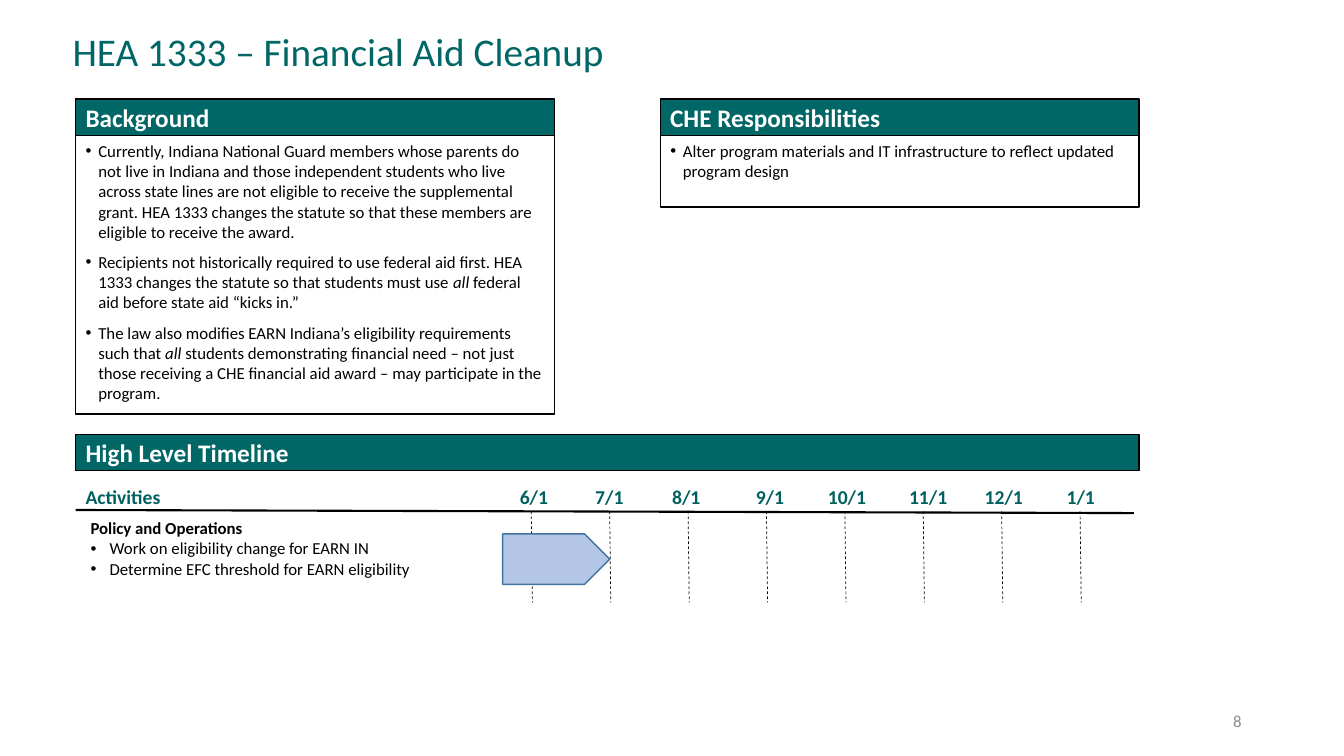
import pptx
import pptx.util
import pptx.dml.color
import pptx.enum.dml
import pptx.enum.shapes
import pptx.enum.text
import pptx.oxml.ns
from lxml import etree

Pt = pptx.util.Pt
RGB = pptx.dml.color.RGBColor.from_string
SHAPE = pptx.enum.shapes.MSO_SHAPE
ALIGN = pptx.enum.text.PP_ALIGN
ANCHOR = pptx.enum.text.MSO_ANCHOR
qn = pptx.oxml.ns.qn

THEME = {
    "black": RGB("000000"), "teal": RGB("006666"),
    "arrow": RGB("B4C7E7"), "arrow_edge": RGB("43739E"),
    "title": dict(size=Pt(28), bold=False, color=RGB("006666")),
    "header": dict(size=Pt(18), bold=True, color=RGB("FFFFFF")),
    "label": dict(size=Pt(14), bold=True, color=RGB("00605F")),
    "body": dict(size=Pt(12), bold=False, color=RGB("000000")),
    "strong": dict(size=Pt(12), bold=True, color=RGB("000000")),
    "number": dict(size=Pt(12), bold=False, color=RGB("8C8C8C")),
}


def write(shape, paragraphs, style, align=ALIGN.LEFT, anchor=ANCHOR.TOP, indent=0, gap=0):
    """Add paragraphs; *stars* mark italics, an indent in points makes bullets."""
    tf = shape.text_frame
    for name, value in dict(word_wrap=True, vertical_anchor=anchor,
                            auto_size=pptx.enum.text.MSO_AUTO_SIZE.NONE).items():
        setattr(tf, name, value)
    for i, text in enumerate(paragraphs):
        p = tf.add_paragraph() if tf.text else tf.paragraphs[0]
        p.alignment = align
        p.space_before = Pt(gap if i else 0)
        if indent:
            pPr = p._p.get_or_add_pPr()
            pPr.set("marL", str(Pt(indent)))
            pPr.set("indent", str(-Pt(indent)))
            etree.SubElement(pPr, qn("a:buFont"), typeface="Arial")
            etree.SubElement(pPr, qn("a:buChar"), char="•")
        for j, part in enumerate(text.split("*")):
            r = p.add_run()
            r.text = part
            look = dict(name="Calibri", size=style["size"], bold=style["bold"], italic=j % 2 == 1)
            for name, value in look.items():
                setattr(r.font, name, value)
            r.font.color.rgb = style["color"]


def draw_line(x1, y1, x2, y2, width, dash=None):
    line = s.shapes.add_connector(pptx.enum.shapes.MSO_CONNECTOR.STRAIGHT,
                                  Pt(x1), Pt(y1), Pt(x2), Pt(y2))
    line.line.color.rgb = THEME["black"]
    line.line.width = Pt(width)
    line.line.dash_style = dash
    etree.SubElement(line._element.spPr, qn("a:effectLst"))


prs = pptx.Presentation()
prs.slide_width, prs.slide_height = Pt(960), Pt(540)
s = prs.slides.add_slide(prs.slide_layouts.get_by_name("Two Content"))
title, background, duties = s.placeholders

# Title and the two bulleted panels
LEFT, RIGHT, PANEL_W = 54, 471.6, 342
HEADER_H, PANEL_TOP = 26, 97
panels = [
    (title, 44.6, 15.8, 759, 41),
    (background, LEFT, PANEL_TOP, PANEL_W, 198.7),
    (duties, RIGHT, PANEL_TOP, PANEL_W, 51),
]
for sp, *box in panels:
    for name, value in zip(("left", "top", "width", "height"), box):
        setattr(sp, name, Pt(value))
for sp in (background, duties):
    sp.line.color.rgb = THEME["black"]
    sp.line.width = Pt(1)

write(title, ["HEA 1333 – Financial Aid Cleanup"], THEME["title"])
write(background, [
    "Currently, Indiana National Guard members whose parents do not live in Indiana and "
    "those independent students who live across state lines are not eligible to receive the "
    "supplemental grant. HEA 1333 changes the statute so that these members are eligible to "
    "receive the award.",
    "Recipients not historically required to use federal aid first. HEA 1333 changes the "
    "statute so that students must use *all* federal aid before state aid “kicks in.”",
    "The law also modifies EARN Indiana’s eligibility requirements such that *all* students "
    "demonstrating financial need – not just those receiving a CHE financial aid award – may "
    "participate in the program.",
], THEME["body"], indent=9, gap=7.3)
write(duties, ["Alter program materials and IT infrastructure to reflect updated program design"],
      THEME["body"], indent=9)

# Header bars
headers = [
    ("Background", LEFT, 70.8, PANEL_W),
    ("CHE Responsibilities", RIGHT, 70.8, PANEL_W),
    ("High Level Timeline", LEFT, 310.3, RIGHT + PANEL_W - LEFT),
]
for text, x, y, w in headers:
    bar = s.shapes.add_shape(SHAPE.RECTANGLE, Pt(x), Pt(y), Pt(w), Pt(HEADER_H))
    bar.shadow.inherit = False
    bar.fill.solid()
    bar.fill.fore_color.rgb = THEME["teal"]
    bar.line.color.rgb = THEME["black"]
    bar.line.width = Pt(1)
    write(bar, [text], THEME["header"], anchor=ANCHOR.MIDDLE)

# Timeline: month labels with their centres, and evenly spaced month lines
LABEL_TOP, LABEL_W, LABEL_H = 342.7, 60, 24.5
MONTH_X, MONTH_STEP, MONTH_TOP = 379.5, 56, 365.2
months = [("6/1", 381.4), ("7/1", 435.3), ("8/1", 490.2), ("9/1", 550),
          ("10/1", 605), ("11/1", 663), ("12/1", 717), ("1/1", 772)]
for i, (month, centre) in enumerate(months):
    x = MONTH_X + i * MONTH_STEP
    draw_line(x, MONTH_TOP, x + 0.8, MONTH_TOP + 65, 0.5, pptx.enum.dml.MSO_LINE.DASH)
    label = s.shapes.add_textbox(Pt(centre - LABEL_W / 2), Pt(LABEL_TOP), Pt(LABEL_W), Pt(LABEL_H))
    write(label, [month], THEME["label"], align=ALIGN.CENTER)
draw_line(LEFT, 364.3, 810, 366.5, 1.5)

label = s.shapes.add_textbox(Pt(LEFT), Pt(LABEL_TOP), Pt(259), Pt(LABEL_H))
write(label, ["Activities"], THEME["label"])

activities = s.shapes.add_textbox(Pt(57.6), Pt(366.5), Pt(304.6), Pt(51))
write(activities, ["Policy and Operations"], THEME["strong"])
write(activities, ["Work on eligibility change for EARN IN",
                   "Determine EFC threshold for EARN eligibility"], THEME["body"], indent=13.7)

arrow = s.shapes.add_shape(SHAPE.PENTAGON, Pt(359), Pt(381.4), Pt(76.5), Pt(36))
arrow.shadow.inherit = False
arrow.fill.solid()
arrow.fill.fore_color.rgb = THEME["arrow"]
arrow.line.color.rgb = THEME["arrow_edge"]
arrow.line.width = Pt(1)

number = s.shapes.add_textbox(Pt(678), Pt(500.4), Pt(216), Pt(28.8))
write(number, ["8"], THEME["number"], align=ALIGN.RIGHT, anchor=ANCHOR.MIDDLE)

prs.save("out.pptx")
